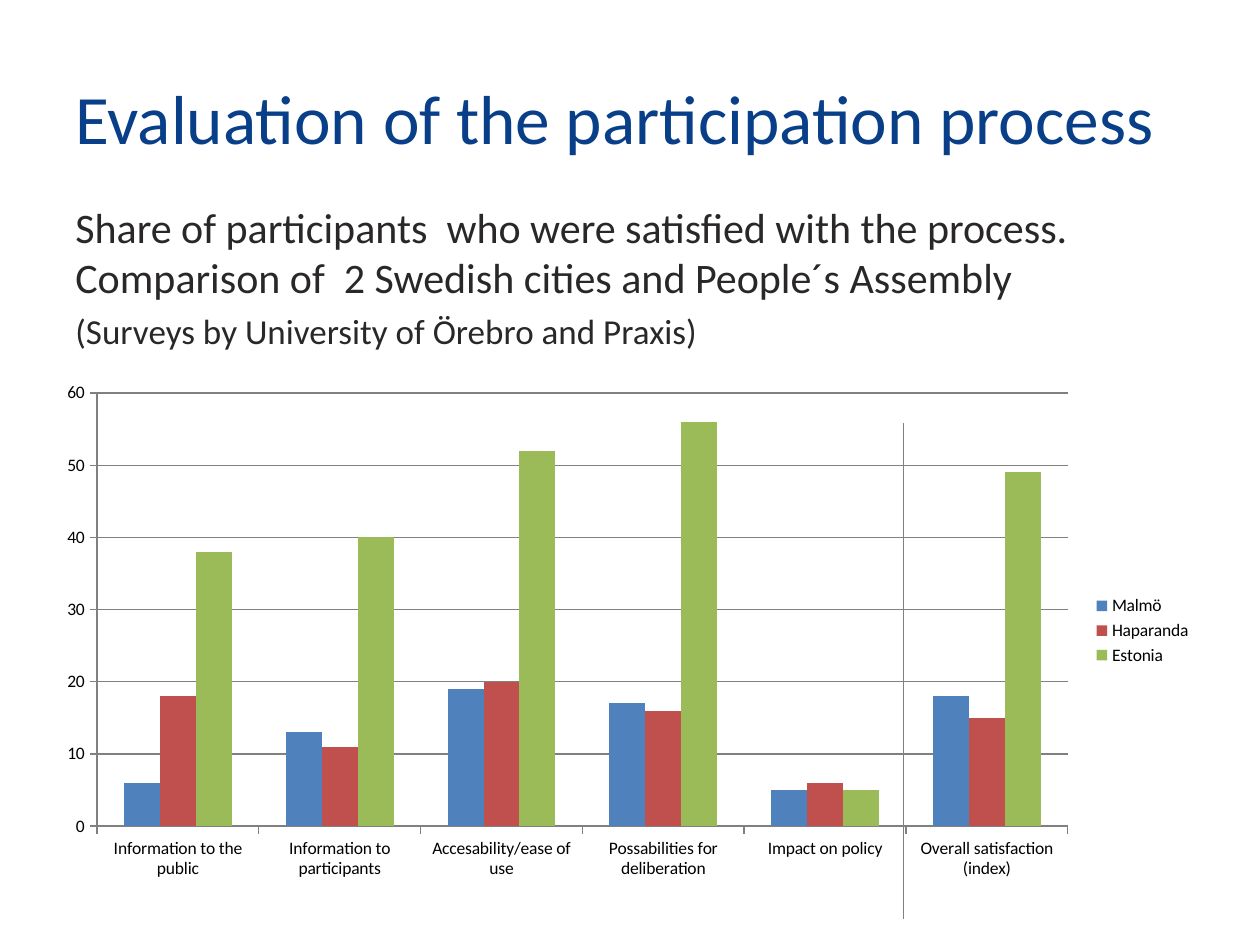
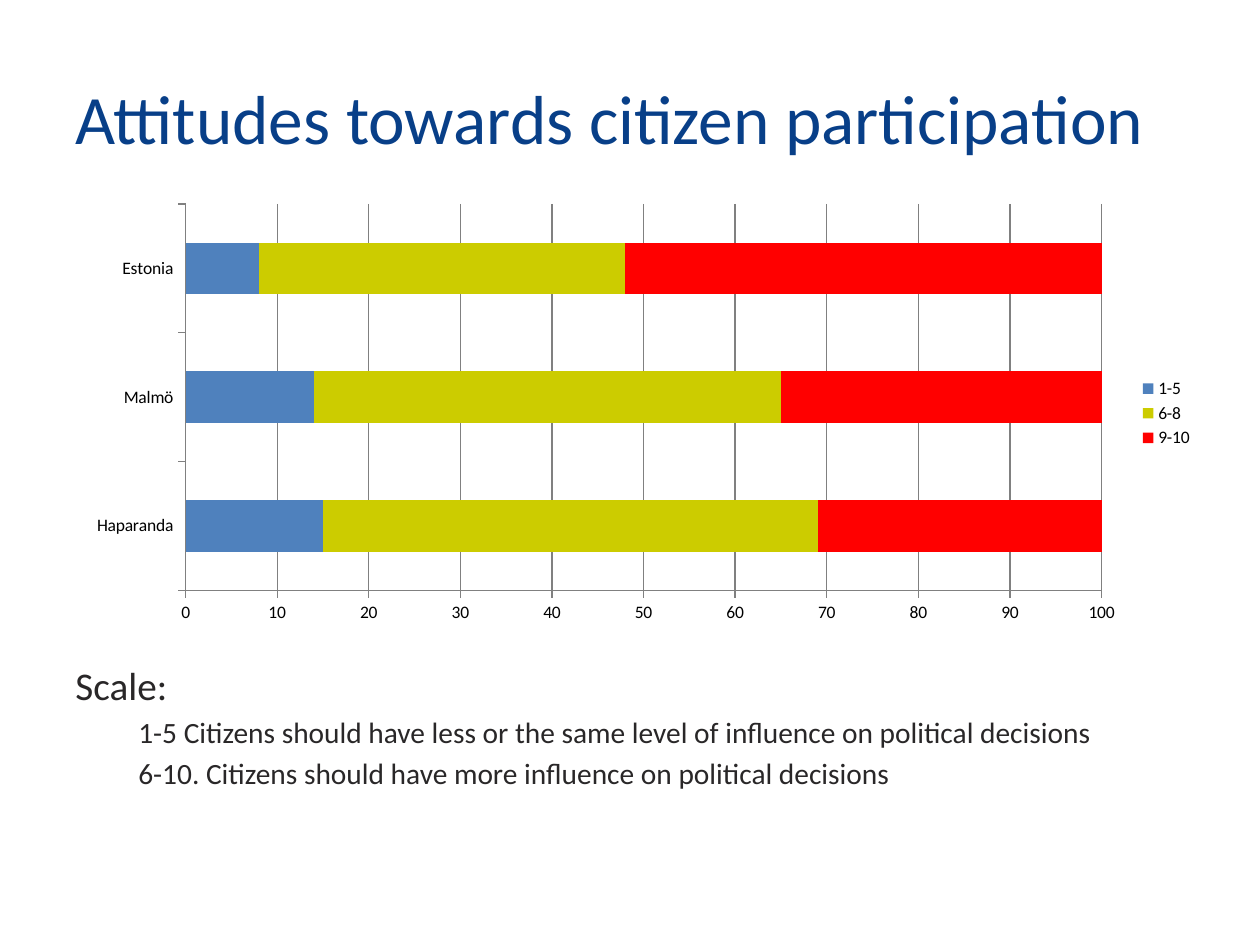
from lxml.etree import SubElement
from pptx import Presentation
from pptx.chart.data import CategoryChartData
from pptx.dml.color import RGBColor
from pptx.enum.chart import XL_CHART_TYPE, XL_LEGEND_POSITION, XL_TICK_MARK
from pptx.enum.shapes import MSO_CONNECTOR
from pptx.enum.text import MSO_ANCHOR
from pptx.oxml.ns import qn
from pptx.util import Inches, Pt

FONT = "Calibri"
NAVY = RGBColor(0x08, 0x3F, 0x88)
CHARCOAL = RGBColor(0x29, 0x27, 0x28)
BLACK = RGBColor(0x00, 0x00, 0x00)
GRAY = RGBColor(0x80, 0x80, 0x80)
BLUE = RGBColor(0x4F, 0x81, 0xBD)
BRICK = RGBColor(0xC0, 0x50, 0x4D)
GREEN = RGBColor(0x9B, 0xBB, 0x59)
OLIVE = RGBColor(0xCC, 0xCC, 0x00)
RED = RGBColor(0xFF, 0x00, 0x00)

deck = Presentation()
deck.slide_width = Inches(10)
deck.slide_height = Inches(7.5)
COLUMN = deck.slide_width // 20
ROW = deck.slide_height // 30


def grid(left, top, width, height):
    return [int(left * COLUMN), int(top * ROW), int(width * COLUMN), int(height * ROW)]


def add_text(page, place, paragraphs, color, anchor=MSO_ANCHOR.TOP):
    frame = page.shapes.add_textbox(*grid(*place)).text_frame
    frame.word_wrap = True
    frame.vertical_anchor = anchor
    frame.text = "\n".join(text for text, size, level in paragraphs)
    for para, (text, size, level) in zip(frame.paragraphs, paragraphs):
        para.level = level
        para._p.get_or_add_pPr().set("marL", str(level * COLUMN))
        para.space_before = Pt(size * 0.2)
        font = para.runs[0].font
        font.name = FONT
        font.size = Pt(size)
        font.color.rgb = color


slides = [
    {
        "title": "Evaluation of the participation process",
        "body_place": (1, 6.2, 18, 5.2),
        "body": [
            ("Share of participants  who were satisfied with the process. "
             "Comparison of  2 Swedish cities and People´s Assembly", 24, 0),
            ("(Surveys by University of Örebro and Praxis)", 20, 0),
        ],
        "chart_place": (0.7, 11.84, 18.42, 16.36),
        "chart_type": XL_CHART_TYPE.COLUMN_CLUSTERED,
        "overlap": 0,
        "maximum": 60,
        "categories": [
            "Information to the public", "Information to participants",
            "Accesability/ease of use", "Possabilities for deliberation",
            "Impact on policy", "Overall satisfaction (index)",
        ],
        "series": [
            ("Malmö", [6, 13, 19, 17, 5, 18], BLUE),
            ("Haparanda", [18, 11, 20, 16, 6, 15], BRICK),
            ("Estonia", [38, 40, 52, 56, 5, 49], GREEN),
        ],
        "dividers": [(14.34, 13.44, 29.16)],
    },
    {
        "title": "Attitudes towards citizen participation",
        "body_place": (1, 20.8, 18, 5),
        "body": [
            ("Scale:", 22.4, 0),
            ("1-5 Citizens should have less or the same level of influence "
             "on political decisions", 16.8, 1),
            ("6-10. Citizens should have more influence on political decisions", 16.8, 1),
        ],
        "chart_place": (1.18, 6.2, 17.96, 13.84),
        "chart_type": XL_CHART_TYPE.BAR_STACKED,
        "overlap": 100,
        "maximum": 100,
        "categories": ["Haparanda", "Malmö", "Estonia"],
        "series": [
            ("1-5", [15, 14, 8], BLUE),
            ("6-8", [54, 51, 40], OLIVE),
            ("9-10", [31, 35, 52], RED),
        ],
        "dividers": [],
    },
]

for content in slides:
    page = deck.slides.add_slide(deck.slide_layouts[6])
    add_text(page, (1, 1.2, 18, 5), [(content["title"], 39.6, 0)], NAVY, MSO_ANCHOR.MIDDLE)
    add_text(page, content["body_place"], content["body"], CHARCOAL)

    data = CategoryChartData(number_format="0")
    data.categories = content["categories"]
    for name, values, color in content["series"]:
        data.add_series(name, values)
    chart = page.shapes.add_chart(
        content["chart_type"], *grid(*content["chart_place"]), data).chart
    chart.has_title = False
    chart.font.name = FONT
    chart.font.size = Pt(10)
    chart.font.color.rgb = BLACK
    chart.has_legend = True
    chart.legend.position = XL_LEGEND_POSITION.RIGHT
    chart.legend.include_in_layout = False

    plot = chart.plots[0]
    plot.gap_width = 150
    plot.overlap = content["overlap"]
    plot.vary_by_categories = False
    for series, (name, values, color) in zip(plot.series, content["series"]):
        series.format.fill.solid()
        series.format.fill.fore_color.rgb = color
        series.invert_if_negative = False

    for axis in (chart.category_axis, chart.value_axis):
        axis.major_tick_mark = XL_TICK_MARK.OUTSIDE
        axis.format.line.color.rgb = GRAY
        axis.format.line.width = Pt(0.75)
    scale = chart.value_axis
    scale.minimum_scale = 0
    scale.maximum_scale = content["maximum"]
    scale.major_unit = 10
    scale.tick_labels.number_format = "0"
    scale.tick_labels.number_format_is_linked = False
    scale.has_major_gridlines = True
    scale.major_gridlines.format.line.color.rgb = GRAY
    scale.major_gridlines.format.line.width = Pt(0.75)

    for column, top, bottom in content["dividers"]:
        x = int(column * COLUMN)
        divider = page.shapes.add_connector(
            MSO_CONNECTOR.STRAIGHT, x, int(top * ROW), x, int(bottom * ROW))
        divider.line.color.rgb = GRAY
        divider.line.width = Pt(0.75)
        SubElement(divider._element.spPr, qn("a:effectLst"))

deck.save("out.pptx")
